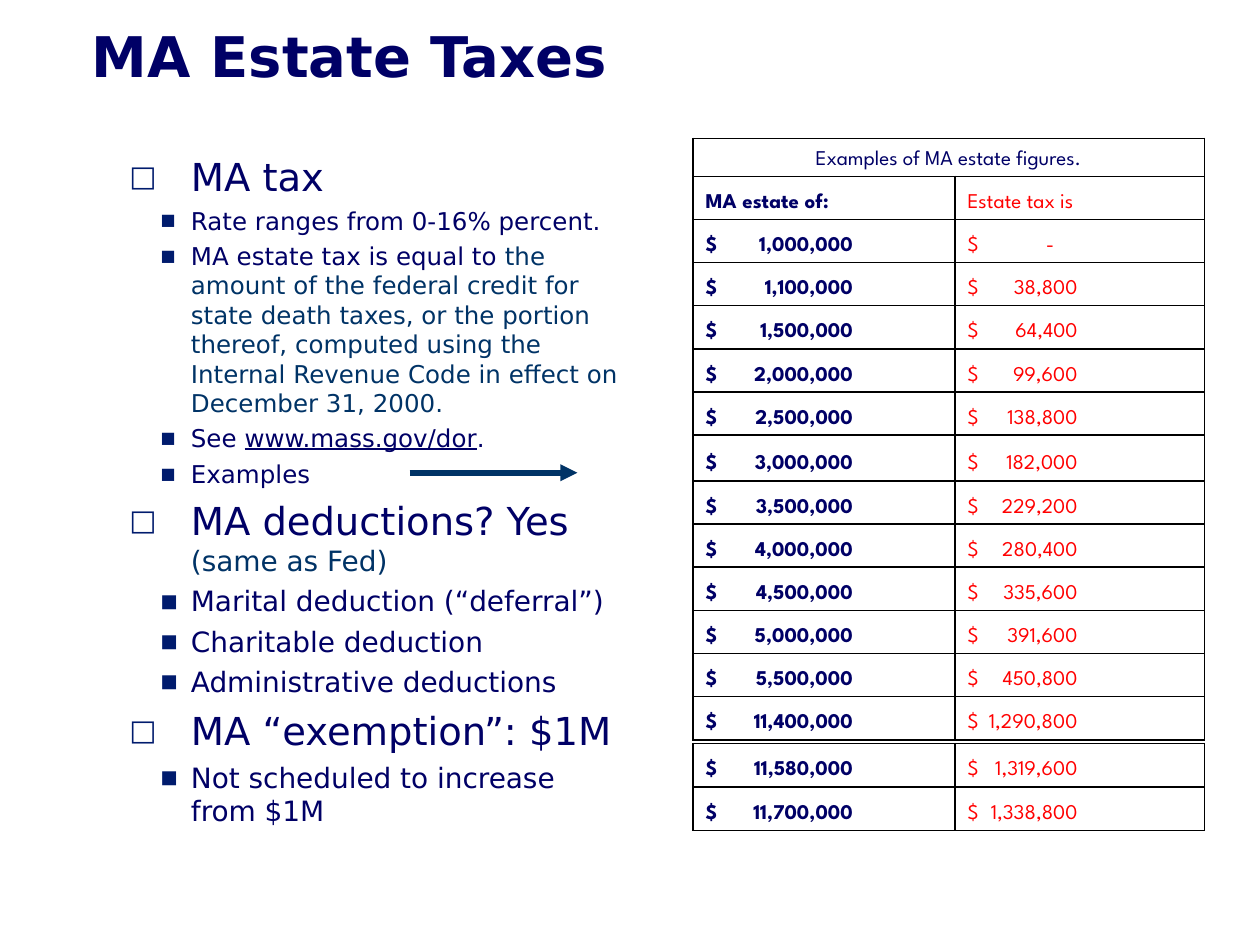
from dataclasses import dataclass

import pptx
import pptx.dml.color
import pptx.enum.shapes
import pptx.enum.text
import pptx.oxml.ns
import pptx.util
from lxml import etree

Cm = pptx.util.Cm
Pt = pptx.util.Pt
Anchor = pptx.enum.text.MSO_ANCHOR
Align = pptx.enum.text.PP_ALIGN


@dataclass(frozen=True)
class Theme:
    navy: str = "000066"
    teal: str = "003366"
    bullet: str = "001B6D"
    red: str = "FF0000"
    white: str = "FFFFFF"
    black: str = "000000"
    sans: str = "DejaVu Sans"
    spartan: str = "League Spartan"
    title: int = 32
    head: int = 22
    large: int = 16
    small: int = 14
    cell: int = 12


theme = Theme()

# Each point: level, size, runs of (text, style)
points = [
    (0, theme.head, [("MA tax", "")]),
    (1, theme.small, [("Rate ranges from 0-16% percent.", "")]),
    (1, theme.small, [
        ("MA estate tax is equal to ", ""),
        ("the amount of the federal credit for state death taxes, or the "
         "portion thereof, computed using the Internal Revenue Code in "
         "effect on December 31, 2000.", "teal")]),
    (1, theme.small, [("See ", ""), ("www.mass.gov/dor", "under"), (".", "")]),
    (1, theme.small, [("Examples", "")]),
    (0, theme.head, [("MA deductions? Yes ", ""), ("(same as Fed)", "note")]),
    (1, theme.large, [("Marital deduction (“deferral”)", "")]),
    (1, theme.large, [("Charitable deduction", "")]),
    (1, theme.large, [("Administrative deductions", "")]),
    (0, theme.head, [("MA “exemption”: $1M", "")]),
    (1, theme.large, [("Not scheduled to increase from $1M", "")]),
]

figures = [
    ("1,000,000", "-"), ("1,100,000", "38,800"), ("1,500,000", "64,400"),
    ("2,000,000", "99,600"), ("2,500,000", "138,800"),
    ("3,000,000", "182,000"), ("3,500,000", "229,200"),
    ("4,000,000", "280,400"), ("4,500,000", "335,600"),
    ("5,000,000", "391,600"), ("5,500,000", "450,800"),
    ("11,400,000", "1,290,800"),
]


def color(code):
    return pptx.dml.color.RGBColor.from_string(code)


def add(parent, tag, **attrs):
    node = etree.SubElement(parent, pptx.oxml.ns.qn(tag))
    for key, value in attrs.items():
        node.set(key, str(value))
    return node


def style(font, face, size, code, bold=False):
    font.name, font.size, font.bold = face, Pt(size), bold
    font.color.rgb = color(code)


def place(shape, box):
    shape.left, shape.top, shape.width, shape.height = map(Cm, box)


def add_title(slide, box):
    title = slide.shapes.title
    place(title, box)
    frame = title.text_frame
    frame.text = "MA Estate Taxes"
    frame.vertical_anchor = Anchor.BOTTOM
    para = frame.paragraphs[0]
    para.alignment = Align.LEFT
    style(para.font, theme.sans, theme.title, theme.navy, True)


def add_bullet(para, level):
    char, scale, hang = [("□", 75, 1.24), ("■", 65, 0.61)][level]
    props = para._p.get_or_add_pPr()
    props.set("marL", str(Cm(1.9)))
    props.set("indent", str(-Cm(hang)))
    add(add(props, "a:buClr"), "a:srgbClr", val=theme.bullet)
    add(props, "a:buSzPct", val=scale * 1000)
    add(props, "a:buFont", typeface=theme.sans)
    add(props, "a:buChar", char=char)


def add_points(slide, box):
    frame = slide.shapes.add_textbox(*map(Cm, box)).text_frame
    frame.word_wrap = True
    for row, (level, size, runs) in enumerate(points):
        para = frame.add_paragraph() if row else frame.paragraphs[0]
        para.level = level
        add_bullet(para, level)
        if row:
            para.space_before = Pt(round(size * 0.24, 1))
        style(para.font, theme.sans, size, theme.navy)
        for text, kind in runs:
            run = para.add_run()
            run.text = text
            if kind in ("teal", "note"):
                run.font.color.rgb = color(theme.teal)
            if kind == "note":
                run.font.size = Pt(theme.large)
            if kind == "under":
                run.font.underline = True


def add_arrow(slide, left, top, width):
    arrow = slide.shapes.add_connector(
        pptx.enum.shapes.MSO_CONNECTOR.STRAIGHT,
        Cm(left), Cm(top), Cm(left + width), Cm(top))
    arrow.line.color.rgb = color(theme.teal)
    arrow.line.width = Pt(3.25)
    add(arrow.line._get_or_add_ln(), "a:tailEnd", type="triangle")
    add(arrow._element.spPr, "a:effectLst")


def add_edges(cell):
    props = cell._tc.get_or_add_tcPr()
    for side in ("a:lnL", "a:lnR", "a:lnT", "a:lnB"):
        line = add(props, side, w=Pt(1))
        add(add(line, "a:solidFill"), "a:srgbClr", val=theme.black)


def fill_cell(cell, text, code, bold, stop=None):
    add_edges(cell)
    cell.fill.solid()
    cell.fill.fore_color.rgb = color(theme.white)
    cell.vertical_anchor = Anchor.BOTTOM
    para = cell.text_frame.paragraphs[0]
    if stop:
        tabs = add(para._p.get_or_add_pPr(), "a:tabLst")
        add(tabs, "a:tab", pos=Cm(stop), algn="r")
    para.add_run().text = text
    style(para.font, theme.spartan, theme.cell, code, bold)
    return para


def add_grid(slide, left, top, heights):
    widths = (5.28, 5.03)
    grid = slide.shapes.add_table(
        len(heights), 2, Cm(left), Cm(top),
        Cm(sum(widths)), Cm(sum(heights))).table
    grid.first_row = grid.horz_banding = False
    for col, width in zip(grid.columns, widths):
        col.width = Cm(width)
    for row, height in zip(grid.rows, heights):
        row.height = Cm(height)
    return grid


def fill_row(grid, row, estate, tax):
    fill_cell(grid.cell(row, 0), f"$\t{estate}", theme.navy, True, 2.97)
    stop = 1.75 if tax == "-" else 2.22
    fill_cell(grid.cell(row, 1), f"$\t{tax}", theme.red, False, stop)


def add_figures(slide, left, top):
    # Caption, column heads and main figures
    heights = [0.71] + [0.87] * 6 + [0.92] + [0.87] * 6
    grid = add_grid(slide, left, top, heights)
    grid.cell(0, 0).merge(grid.cell(0, 1))
    add_edges(grid.cell(0, 1))
    para = fill_cell(grid.cell(0, 0), "Examples of MA estate figures.",
                     theme.navy, False)
    para.alignment = Align.CENTER
    fill_cell(grid.cell(1, 0), "MA estate of:", theme.navy, True)
    fill_cell(grid.cell(1, 1), "Estate tax is", theme.red, False)
    for row, pair in enumerate(figures, 2):
        fill_row(grid, row, *pair)
    # Later years, one table each
    extra = [("11,580,000", "1,319,600"), ("11,700,000", "1,338,800")]
    for step, pair in enumerate(extra):
        fill_row(add_grid(slide, left, top + 12.2 + step * 0.88, [0.87]),
                 0, *pair)


def main():
    deck = pptx.Presentation()
    deck.slide_width, deck.slide_height = Cm(25.4), Cm(19.05)
    slide = deck.slides.add_slide(deck.slide_layouts[5])
    add_title(slide, (1.6, 0.84, 22.33, 1.07))
    add_points(slide, (1.7, 2.97, 11.13, 11.86))
    add_figures(slide, 13.97, 2.79)
    add_arrow(slide, 8.26, 9.53, 3.38)
    deck.save("out.pptx")


if __name__ == "__main__":
    main()
